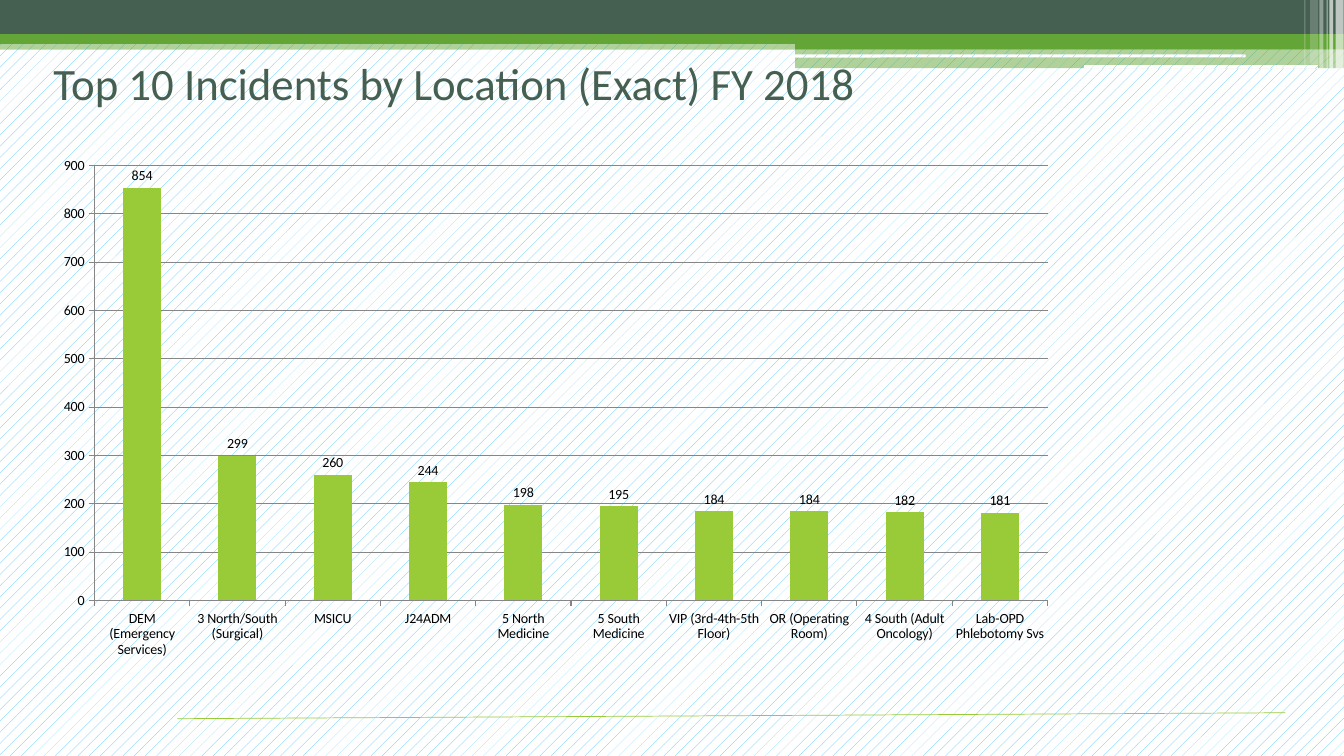
import pptx
import pptx.chart.data
import pptx.dml.color
import pptx.enum.chart
import pptx.enum.dml
import pptx.enum.shapes
import pptx.enum.text
import pptx.oxml
import pptx.oxml.ns
import pptx.util
from dataclasses import dataclass
from lxml import etree

Cm, Pt = pptx.util.Cm, pptx.util.Pt
RGB = pptx.dml.color.RGBColor.from_string
qn = pptx.oxml.ns.qn
SHAPE = pptx.enum.shapes.MSO_SHAPE


@dataclass(frozen=True)
class Theme:
    dark: str = "455F51"
    green: str = "63A537"
    lime: str = "99CB38"
    sky: str = "51C3F9"
    white: str = "FFFFFF"
    black: str = "000000"
    grid: str = "868686"
    font: str = "Calibri"
    title_size: int = 32
    chart_size: int = 10


theme = Theme()


def hatch(fill):
    fill.patterned()
    fill.pattern = pptx.enum.dml.MSO_PATTERN.PERCENT_10
    fill.fore_color.rgb = RGB(theme.sky)
    fill.back_color.rgb = RGB(theme.white)


def add_bar(kind, left, top, width, height, color=None, alpha=100):
    sp = slide.shapes.add_shape(kind, Cm(left), Cm(top), Cm(width), Cm(height))
    sp.shadow.inherit = False
    sp.line.fill.background()
    if color is None:
        hatch(sp.fill)
        return
    sp.fill.solid()
    sp.fill.fore_color.rgb = RGB(color)
    if alpha < 100:
        clr = sp._element.spPr.find(".//" + qn("a:srgbClr"))
        etree.SubElement(clr, qn("a:alpha"), val=str(alpha * 1000))


prs = pptx.Presentation()
prs.slide_width, prs.slide_height = Cm(33.87), Cm(19.05)
slide = prs.slides.add_slide(prs.slide_layouts[5])
hatch(slide.background.fill)

step_left, step_width = 20.04, 13.83
for left, top, width, height, color, alpha in [
    (0, 1.02, 33.87, 0.23, theme.green, 50),
    (0, 0, 33.87, 0.86, theme.dark, 100),
    (0, 0.86, 33.87, 0.25, theme.green, 100),
    (step_left, 0.99, step_width, 0.25, theme.green, 100),
    (step_left, 1.22, step_width, 0.5, theme.green, 50),
]:
    add_bar(SHAPE.RECTANGLE, left, top, width, height, color, alpha)

add_bar(SHAPE.ROUNDED_RECTANGLE, step_left, 1.37, 11.35, 0.08)
add_bar(SHAPE.ROUNDED_RECTANGLE, 27.31, 1.63, 5.92, 0.1)

for left, width, height, alpha in [
    (33.66, 0.2, 1.73, 65),
    (33.5, 0.1, 1.73, 65),
    (33.43, 0.03, 1.73, 60),
    (33.25, 0.1, 1.73, 40),
    (33.02, 0.2, 1.63, 20),
    (32.87, 0.03, 1.63, 30),
]:
    add_bar(SHAPE.RECTANGLE, left, 0, width, height, theme.white, alpha)

rule = slide.shapes.add_connector(
    pptx.enum.shapes.MSO_CONNECTOR.STRAIGHT, Cm(4.47), Cm(18.11), Cm(32.39), Cm(17.96))
rule.line.color.rgb = RGB(theme.lime)
rule.line.width = Pt(0.5)
etree.SubElement(rule._element.spPr, qn("a:effectLst"))

title = slide.shapes.title
title.left, title.top, title.width, title.height = Cm(1.09), Cm(1.27), Cm(28.88), Cm(3.2)
tf = title.text_frame
tf.word_wrap = True
tf.vertical_anchor = pptx.enum.text.MSO_ANCHOR.TOP
p = tf.paragraphs[0]
p.text = "Top 10 Incidents by Location (Exact) FY 2018"
p.alignment = pptx.enum.text.PP_ALIGN.LEFT
p.font.name = theme.font
p.font.size = Pt(theme.title_size)
p.font.color.rgb = RGB(theme.dark)

incidents = {
    "DEM (Emergency Services)": 854,
    "3 North/South (Surgical)": 299,
    "MSICU": 260,
    "J24ADM": 244,
    "5 North Medicine": 198,
    "5 South Medicine": 195,
    "VIP (3rd-4th-5th Floor)": 184,
    "OR (Operating Room)": 184,
    "4 South (Adult Oncology)": 182,
    "Lab-OPD Phlebotomy Svs": 181,
}
data = pptx.chart.data.CategoryChartData()
data.categories = list(incidents)
data.add_series("Series 1", list(incidents.values()))
chart = slide.shapes.add_chart(
    pptx.enum.chart.XL_CHART_TYPE.COLUMN_CLUSTERED,
    Cm(1.09), Cm(3.71), Cm(25.83), Cm(13.13), data).chart
chart.has_title = False
chart.has_legend = False
chart.font.name = theme.font
chart.font.size = Pt(theme.chart_size)
chart.font.color.rgb = RGB(theme.black)

plot = chart.plots[0]
plot.vary_by_categories = False
plot.gap_width = 150
fill = plot.series[0].format.fill
fill.solid()
fill.fore_color.rgb = RGB(theme.lime)
plot.has_data_labels = True
plot.data_labels.show_value = True
plot.data_labels.position = pptx.enum.chart.XL_LABEL_POSITION.OUTSIDE_END

value_axis = chart.value_axis
value_axis.minimum_scale, value_axis.maximum_scale, value_axis.major_unit = 0, 900, 100
value_axis.has_major_gridlines = True
for axis in (chart.category_axis, value_axis):
    axis.major_tick_mark = pptx.enum.chart.XL_TICK_MARK.OUTSIDE
for part in (chart.category_axis, value_axis, value_axis.major_gridlines):
    part.format.line.color.rgb = RGB(theme.grid)
    part.format.line.width = Pt(0.75)

plot_area = chart._chartSpace.find(".//" + qn("c:plotArea"))
for old in plot_area.findall(qn("c:layout")):
    plot_area.remove(old)
layout = etree.Element(qn("c:layout"))
manual = etree.SubElement(layout, qn("c:manualLayout"))
for tag, val in [("layoutTarget", "inner"), ("xMode", "edge"), ("yMode", "edge"),
                 ("x", "0.05"), ("y", "0.035"), ("w", "0.93"), ("h", "0.835")]:
    etree.SubElement(manual, qn("c:" + tag), val=val)
plot_area.insert(0, layout)

prs.save("out.pptx")
